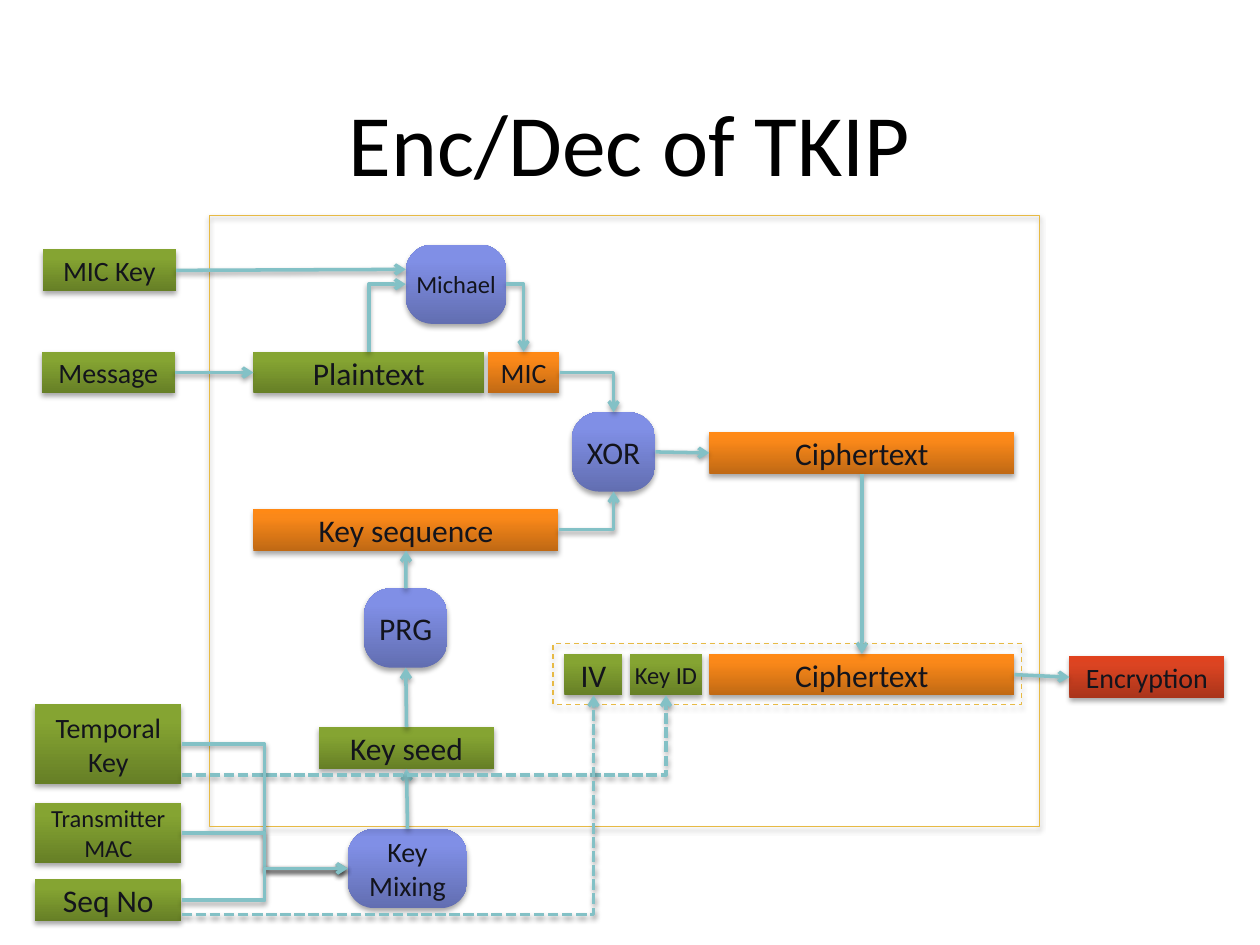
from copy import deepcopy

from lxml.etree import SubElement
from pptx import Presentation
from pptx.dml.color import RGBColor
from pptx.enum.dml import MSO_LINE
from pptx.enum.shapes import MSO_CONNECTOR, MSO_SHAPE
from pptx.enum.text import MSO_ANCHOR, PP_ALIGN
from pptx.oxml.ns import qn
from pptx.util import Cm, Pt

THEME = {
    "font": "Calibri",
    "title_size": 50,
    "title": "000000",
    "ink": "13141C",
    "arrow": "83C1C6",
    "border": "E7BA45",
    "shadow": "000000",
    "stops": (0, 0.8, 1),
    "input": ("667F26", "85A432", "87A730"),
    "output": ("C06914", "FA8819", "FF8915"),
    "step": ("626EB1", "808FE6", "7E8EE9"),
    "result": ("A9341A", "DB4422", "E0421E"),
    "large": 18,
    "medium": 16,
    "small": 14,
}
TOP, LEFT, BOTTOM, RIGHT = 0, 1, 2, 3
BAR, TALL, DOUBLE = 0.84, 1.6, 1.22
INSET = 0.25

TITLE = "Enc/Dec of TKIP"

# key: text, role, size, left, top, width, height, side inset
NODES = {
    "plaintext": ("Plaintext", "input", "large", 5.11, 7.09, 4.65, BAR, INSET),
    "michael": ("Michael", "step", "small", 8.18, 4.93, 2.03, TALL, 0),
    "mic": ("MIC", "output", "medium", 9.83, 7.09, 1.45, BAR, INSET),
    "iv": ("IV", "input", "large", 11.38, 13.18, 1.17, BAR, 0),
    "key id": ("Key ID", "input", "small", 12.7, 13.18, 1.45, BAR, 0),
    "xor": ("XOR", "step", "large", 11.53, 8.31, 1.68, TALL, 0),
    "ciphertext": ("Ciphertext", "output", "large", 14.3, 8.71, 6.15, BAR, INSET),
    "payload": ("Ciphertext", "output", "large", 14.3, 13.18, 6.15, BAR, 0),
    "prg": ("PRG", "step", "large", 7.34, 11.86, 1.68, TALL, 0),
    "sequence": ("Key sequence", "output", "large", 5.11, 10.26, 6.15, BAR, INSET),
    "seed": ("Key seed", "input", "large", 6.43, 14.66, 3.53, BAR, INSET),
    "mixing": ("Key\nMixing", "step", "medium", 7.01, 16.71, 2.41, TALL, 0),
    "mic key": ("MIC Key", "input", "medium", 0.86, 5.03, 2.69, BAR, INSET),
    "message": ("Message", "input", "medium", 0.84, 7.09, 2.69, BAR, INSET),
    "temporal": ("Temporal Key", "input", "medium", 0.71, 14.2, 2.95, TALL, INSET),
    "transmitter": ("Transmitter\nMAC", "input", "small", 0.71, 16.18, 2.95, DOUBLE, INSET),
    "seq no": ("Seq No", "input", "large", 0.71, 17.73, 2.95, BAR, INSET),
    "encryption": ("Encryption", "result", "medium", 21.56, 13.23, 3.12, BAR, INSET),
}
FRAMES = [
    (4.22, 4.34, 16.74, 12.32, MSO_LINE.SOLID),
    (11.15, 12.98, 9.45, 1.22, MSO_LINE.DASH),
]
STRAIGHT = [
    ("message", RIGHT, "plaintext", LEFT),
    ("xor", RIGHT, "ciphertext", LEFT),
    ("ciphertext", BOTTOM, "payload", TOP),
    ("payload", RIGHT, "encryption", LEFT),
    ("prg", TOP, "sequence", BOTTOM),
    ("seed", TOP, "prg", BOTTOM),
    ("mixing", TOP, "seed", BOTTOM),
]
# start, side, end, side, drop below the start side's middle, dash, arrow end
CORNERS = [
    ("michael", LEFT, "plaintext", TOP, 0, MSO_LINE.SOLID, "headEnd"),
    ("michael", RIGHT, "mic", TOP, 0, MSO_LINE.SOLID, "tailEnd"),
    ("mic", RIGHT, "xor", TOP, 0, MSO_LINE.SOLID, "tailEnd"),
    ("sequence", RIGHT, "xor", BOTTOM, 0, MSO_LINE.SOLID, "tailEnd"),
    ("temporal", RIGHT, "key id", BOTTOM, 0.62, MSO_LINE.SQUARE_DOT, "tailEnd"),
    ("seq no", RIGHT, "iv", BOTTOM, 0.29, MSO_LINE.SQUARE_DOT, "tailEnd"),
]
MIXED = ["temporal", "transmitter", "seq no"]
MIC_KEY_RISE = -0.3


def color(name):
    return RGBColor.from_string(THEME.get(name, name))


def add_shadow(effects, distance, opacity):
    shadow = SubElement(effects, qn("a:outerShdw"), blurRad=str(Pt(3.1)),
                        dist=str(Pt(distance)), dir="5400000", rotWithShape="0")
    tint = SubElement(shadow, qn("a:srgbClr"), val=THEME["shadow"])
    SubElement(tint, qn("a:alpha"), val=str(opacity * 1000))


def style_text(frame, size, ink):
    for paragraph in frame.paragraphs:
        paragraph.alignment = PP_ALIGN.CENTER
        for run in paragraph.runs:
            run.font.name = THEME["font"]
            run.font.size = Pt(THEME[size])
            run.font.color.rgb = color(ink)


def add_box(slide, preset, *bounds):
    box = slide.shapes.add_shape(preset, *map(Cm, bounds))
    box.shadow.inherit = False
    add_shadow(box._element.spPr.find(qn("a:effectLst")), 1.8, 35)
    return box


def add_node(slide, text, role, size, left, top, width, height, inset):
    rounded = role == "step"
    preset = MSO_SHAPE.ROUNDED_RECTANGLE if rounded else MSO_SHAPE.RECTANGLE
    node = add_box(slide, preset, left, top, width, height)
    if rounded:
        node.adjustments[0] = 0.34
    node.line.fill.background()
    node.fill.gradient()
    node.fill.gradient_angle = 90
    stops = node._element.spPr.find(".//" + qn("a:gsLst"))
    stops.append(deepcopy(stops[0]))
    for stop, position, shade in zip(node.fill.gradient_stops, THEME["stops"], THEME[role]):
        stop.position = position
        stop.color.rgb = color(shade)
    frame = node.text_frame
    frame.word_wrap = True
    frame.vertical_anchor = MSO_ANCHOR.MIDDLE
    frame.margin_left = frame.margin_right = Cm(inset)
    frame.margin_top = frame.margin_bottom = Cm(inset / 2)
    frame.text = text
    style_text(frame, size, "ink")
    return node


def side_point(node, side, drop=0):
    across = {LEFT: 0, RIGHT: 1}.get(side, 0.5)
    down = {TOP: 0, BOTTOM: 1}.get(side, 0.5)
    return (int(node.left + node.width * across),
            int(node.top + node.height * down) + Cm(drop))


def add_arrow(slide, kind, start, end, dash=MSO_LINE.SOLID, arrow_end="tailEnd"):
    arrow = slide.shapes.add_connector(kind, *start, *end)
    arrow.line.color.rgb = color("arrow")
    arrow.line.width = Pt(2)
    arrow.line.dash_style = dash
    properties = arrow._element.spPr
    SubElement(properties.find(qn("a:ln")), qn(f"a:{arrow_end}"), type="arrow")
    add_shadow(SubElement(properties, qn("a:effectLst")), 1.6, 38)
    return arrow


def main():
    deck = Presentation()
    deck.slide_width, deck.slide_height = Cm(25.4), Cm(19.05)
    slide = deck.slides.add_slide(deck.slide_layouts[5])

    title = slide.shapes.title
    title.left, title.top, title.width, title.height = map(Cm, (1.27, 1.27, 22.86, 3.18))
    title.text_frame.text = TITLE
    style_text(title.text_frame, "title_size", "title")

    nodes = {key: add_node(slide, *node) for key, node in NODES.items()}

    for *bounds, dash in FRAMES:
        frame = add_box(slide, MSO_SHAPE.RECTANGLE, *bounds)
        frame.fill.background()
        frame.line.color.rgb = color("border")
        frame.line.width = Pt(0.75)
        frame.line.dash_style = dash

    for source, out, target, into in STRAIGHT:
        arrow = add_arrow(slide, MSO_CONNECTOR.STRAIGHT,
                          side_point(nodes[source], out), side_point(nodes[target], into))
        arrow.begin_connect(nodes[source], out)
        arrow.end_connect(nodes[target], into)

    mic_key = add_arrow(slide, MSO_CONNECTOR.STRAIGHT, side_point(nodes["mic key"], RIGHT),
                        side_point(nodes["michael"], LEFT, MIC_KEY_RISE))
    mic_key.begin_connect(nodes["mic key"], RIGHT)

    for source, out, target, into, drop, dash, arrow_end in CORNERS:
        arrow = add_arrow(slide, MSO_CONNECTOR.ELBOW, side_point(nodes[source], out, drop),
                          side_point(nodes[target], into), dash, arrow_end)
        arrow._element.spPr.find(qn("a:prstGeom")).set("prst", "bentConnector2")

    for source in MIXED:
        add_arrow(slide, MSO_CONNECTOR.ELBOW, side_point(nodes[source], RIGHT),
                  side_point(nodes["mixing"], LEFT))

    deck.save("out.pptx")


if __name__ == "__main__":
    main()
